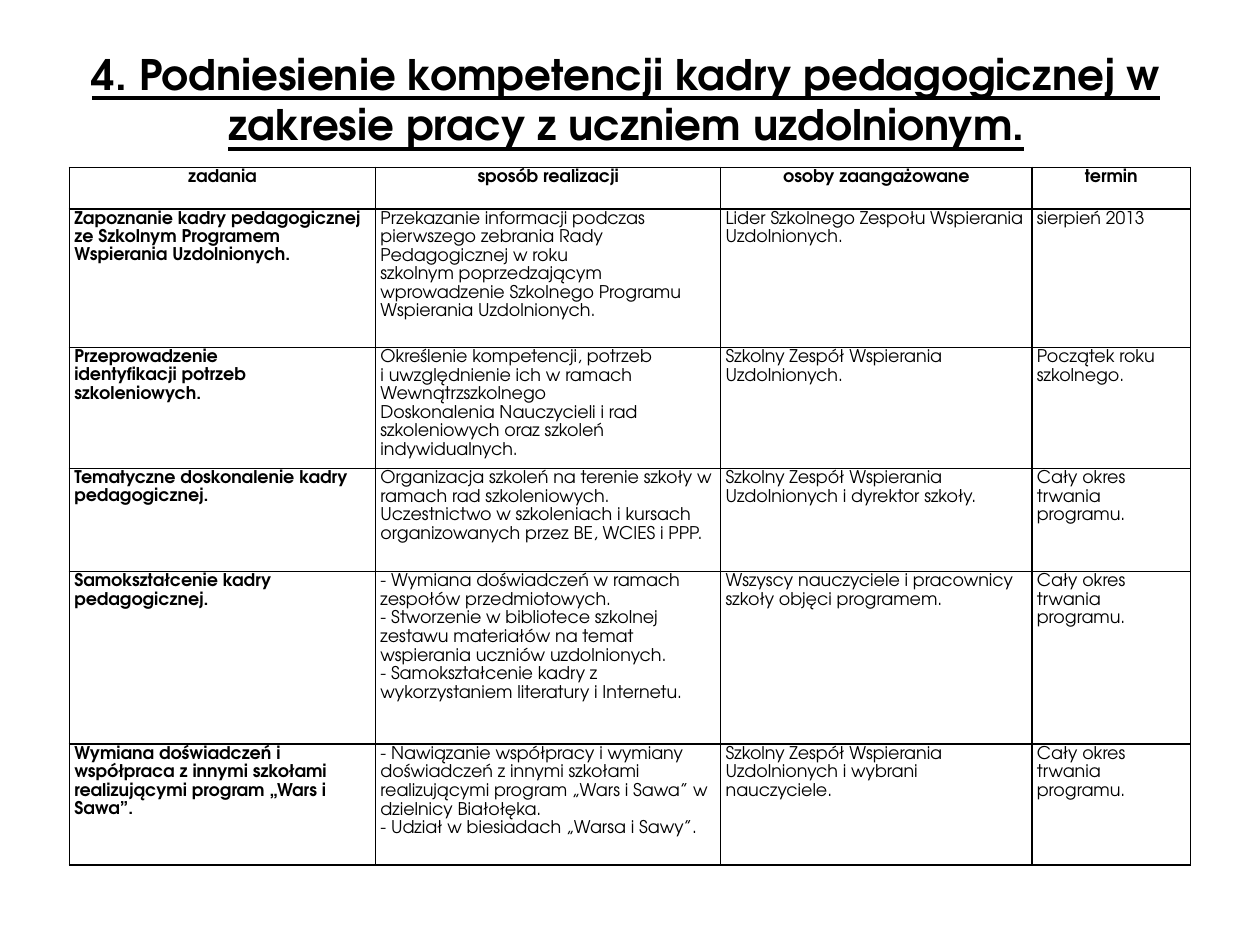
from dataclasses import dataclass

from lxml import etree
from pptx import Presentation, util as u
from pptx.dml.color import RGBColor
from pptx.enum import text
from pptx.oxml import ns

COLORS = {"ink": "000000", "paper": "FFFFFF"}
FONT = "TeX Gyre Adventor"
WIDTH, HEIGHT = u.Inches(10), u.Inches(7.5)
COLS = (2.43, 2.74, 2.47, 1.26)
ROWS = (0.33, 1.1, 0.96, 0.82, 1.37, 0.96)
HEADINGS = ("zadania", "sposób realizacji", "osoby zaangażowane", "termin")
WHOLE_PROGRAM = "Cały okres trwania programu."


@dataclass(frozen=True)
class Task:
    name: tuple[str, ...]
    method: tuple[str, ...]
    people: str
    term: str


TASKS = (
    Task(
        ("Zapoznanie kadry pedagogicznej ze Szkolnym Programem Wspierania Uzdolnionych.",),
        ("Przekazanie informacji podczas",
         "pierwszego zebrania Rady",
         "Pedagogicznej w roku",
         "szkolnym poprzedzającym wprowadzenie Szkolnego Programu Wspierania Uzdolnionych."),
        "Lider Szkolnego Zespołu Wspierania Uzdolnionych.",
        "sierpień 2013",
    ),
    Task(
        ("Przeprowadzenie", "identyfikacji potrzeb", "szkoleniowych."),
        ("Określenie kompetencji, potrzeb",
         "i uwzględnienie ich w ramach",
         "Wewnątrzszkolnego",
         "Doskonalenia Nauczycieli i rad szkoleniowych oraz szkoleń indywidualnych."),
        "Szkolny Zespół Wspierania Uzdolnionych.",
        "Początek roku szkolnego.",
    ),
    Task(
        ("Tematyczne doskonalenie kadry pedagogicznej.",),
        ("Organizacja szkoleń na terenie szkoły w ramach rad szkoleniowych.",
         "Uczestnictwo w szkoleniach i kursach organizowanych przez BE, WCIES i PPP."),
        "Szkolny Zespół Wspierania Uzdolnionych i dyrektor szkoły.",
        WHOLE_PROGRAM,
    ),
    Task(
        ("Samokształcenie kadry pedagogicznej.",),
        ("- Wymiana doświadczeń w ramach zespołów przedmiotowych.",
         "- Stworzenie w bibliotece szkolnej zestawu materiałów na temat "
         "wspierania uczniów uzdolnionych.",
         "- Samokształcenie kadry z wykorzystaniem literatury i Internetu."),
        "Wszyscy nauczyciele i pracownicy szkoły objęci programem.",
        WHOLE_PROGRAM,
    ),
    Task(
        ("Wymiana doświadczeń i współpraca z innymi szkołami realizującymi "
         "program „Wars i Sawa”.",),
        ("- Nawiązanie współpracy i wymiany doświadczeń z innymi szkołami "
         "realizującymi program „Wars i Sawa” w dzielnicy Białołęka.",
         "- Udział w biesiadach „Warsa i Sawy”."),
        "Szkolny Zespół Wspierania Uzdolnionych i wybrani nauczyciele.",
        WHOLE_PROGRAM,
    ),
)


def add_run(p, content: str, size: float, bold: bool, underline: bool = False) -> None:
    r = p.add_run()
    r.text = content
    r.font.name, r.font.size = FONT, u.Pt(size)
    r.font.bold, r.font.underline = bold, underline
    r.font.color.rgb = RGBColor.from_string(COLORS["ink"])


def add_borders(cell, width: float) -> None:
    pr = cell._tc.get_or_add_tcPr()
    for i, side in enumerate(("lnL", "lnR", "lnT", "lnB")):
        ln = etree.Element(ns.qn(f"a:{side}"), w=str(u.Pt(width)))
        fill = etree.SubElement(ln, ns.qn("a:solidFill"))
        etree.SubElement(fill, ns.qn("a:srgbClr"), val=COLORS["ink"])
        pr.insert(i, ln)


def fill_cell(cell, lines: tuple[str, ...], bold: bool, align) -> None:
    cell.margin_left = cell.margin_right = u.Inches(0.04)
    cell.margin_top = cell.margin_bottom = 0
    cell.vertical_anchor = text.MSO_ANCHOR.TOP
    cell.fill.solid()
    cell.fill.fore_color.rgb = RGBColor.from_string(COLORS["paper"])
    add_borders(cell, 1)
    tf = cell.text_frame
    for i, line in enumerate(lines):
        p = tf.add_paragraph() if i else tf.paragraphs[0]
        p.alignment = align
        p.line_spacing = 1.15
        add_run(p, line, 10, bold)


def add_title(s, content: str) -> None:
    sp = s.shapes.title
    sp.left, sp.top = int(WIDTH * 0.047), int(HEIGHT * 0.021)
    sp.width, sp.height = int(WIDTH * 0.9), int(HEIGHT / 6)
    tf = sp.text_frame
    tf.word_wrap = True
    tf.vertical_anchor = text.MSO_ANCHOR.MIDDLE
    p = tf.paragraphs[0]
    p.alignment = text.PP_ALIGN.CENTER
    add_run(p, content, 24, True, True)


def add_task_table(s) -> None:
    table = s.shapes.add_table(
        len(ROWS), len(COLS), int(WIDTH * 0.055), int(HEIGHT * 0.177),
        u.Inches(sum(COLS)), u.Inches(sum(ROWS))).table
    table.first_row = table.horz_banding = False
    for column, width in zip(table.columns, COLS):
        column.width = u.Inches(width)
    for row, height in zip(table.rows, ROWS):
        row.height = u.Inches(height)
    for c, heading in enumerate(HEADINGS):
        fill_cell(table.cell(0, c), (heading,), True, text.PP_ALIGN.CENTER)
    for r, task in enumerate(TASKS, 1):
        entries = (task.name, task.method, (task.people,), (task.term,))
        for c, lines in enumerate(entries):
            fill_cell(table.cell(r, c), lines, c == 0, text.PP_ALIGN.LEFT)


def main() -> None:
    prs = Presentation()
    prs.slide_width, prs.slide_height = WIDTH, HEIGHT
    s = prs.slides.add_slide(prs.slide_layouts[5])
    add_title(s, "4. Podniesienie kompetencji kadry pedagogicznej w "
                 "zakresie pracy z uczniem uzdolnionym.")
    add_task_table(s)
    prs.save("out.pptx")


if __name__ == "__main__":
    main()
